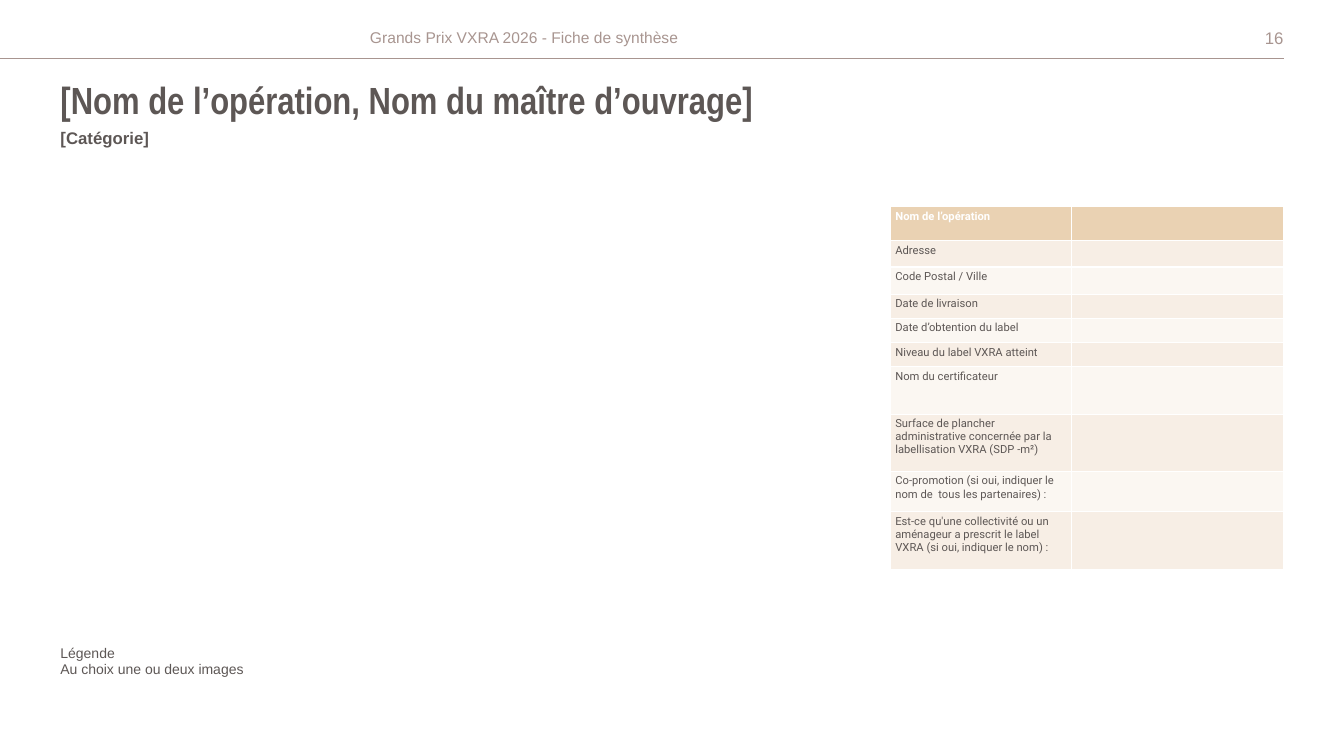
import lxml.etree
import pptx
import pptx.dml.color
import pptx.enum.shapes
import pptx.enum.text
import pptx.oxml.ns
import pptx.util

Inches = pptx.util.Inches
Pt = pptx.util.Pt
RGBColor = pptx.dml.color.RGBColor
Align = pptx.enum.text.PP_ALIGN
Anchor = pptx.enum.text.MSO_ANCHOR
qn = pptx.oxml.ns.qn

WHITE = RGBColor(0xFF, 0xFF, 0xFF)
TAUPE = RGBColor(0xA8, 0x95, 0x90)
CHARCOAL = RGBColor(0x5D, 0x57, 0x55)
SAND = RGBColor(0xEA, 0xD2, 0xB3)
CREAM = RGBColor(0xF7, 0xEE, 0xE5)
IVORY = RGBColor(0xFB, 0xF7, 0xF2)

LEFT = 0.6
RIGHT = 12.73

OPERATION_ROWS = [
    ("Nom de l’opération", 0.34),
    ("Adresse", 0.26),
    ("Code Postal / Ville", 0.27),
    ("Date de livraison", 0.24),
    ("Date d’obtention du label", 0.24),
    ("Niveau du label VXRA atteint", 0.24),
    ("Nom du certificateur", 0.47),
    ("Surface de plancher administrative concernée par la "
     "labellisation VXRA (SDP -m²)", 0.57),
    ("Co-promotion (si oui, indiquer le nom de  tous les partenaires) :", 0.4),
    ("Est-ce qu'une collectivité ou un aménageur a prescrit le label VXRA "
     "(si oui, indiquer le nom) :", 0.57),
]


def write_text(frame, text, size=12, font="Arial", color=CHARCOAL, bold=False,
               align=Align.LEFT, line_spacing=1.0):
    """Fill a text frame, one paragraph per line of text."""
    frame.word_wrap = True
    for index, line in enumerate(text.split("\n")):
        paragraph = frame.add_paragraph() if index else frame.paragraphs[0]
        paragraph.alignment = align
        paragraph.line_spacing = line_spacing
        if not line:
            # An empty line takes its height from the end-of-paragraph size.
            end = lxml.etree.SubElement(paragraph._p, qn("a:endParaRPr"))
            end.set("sz", str(size * 100))
            continue
        run = paragraph.add_run()
        run.text = line
        run.font.size = Pt(size)
        run.font.name = font
        run.font.bold = bold
        run.font.color.rgb = color


class SummarySheet:
    def __init__(self, presentation):
        self.slide = presentation.slides.add_slide(presentation.slide_layouts[5])

    def fill_box(self, box, text, **style):
        frame = box.text_frame
        frame.margin_left = frame.margin_right = 0
        frame.margin_top = frame.margin_bottom = 0
        frame.auto_size = pptx.enum.text.MSO_AUTO_SIZE.NONE
        frame.vertical_anchor = Anchor.TOP
        write_text(frame, text, **style)

    def title(self, text, left, top, width, height, **style):
        heading = self.slide.shapes.title
        heading.left, heading.top = Inches(left), Inches(top)
        heading.width, heading.height = Inches(width), Inches(height)
        self.fill_box(heading, text, **style)

    def text(self, text, left, top, width, height, **style):
        box = self.slide.shapes.add_textbox(
            Inches(left), Inches(top), Inches(width), Inches(height))
        self.fill_box(box, text, **style)

    def rule(self, left, right, top):
        rule = self.slide.shapes.add_connector(
            pptx.enum.shapes.MSO_CONNECTOR.STRAIGHT,
            Inches(left), Inches(top), Inches(right), Inches(top))
        rule.line.color.rgb = TAUPE
        rule.line.width = Pt(1)
        lxml.etree.SubElement(rule._element.spPr, qn("a:effectLst"))

    def form(self, rows, left, top, widths):
        """Add a table of labels with an empty answer column."""
        height = sum(row_height for _, row_height in rows)
        table = self.slide.shapes.add_table(
            len(rows), len(widths), Inches(left), Inches(top),
            Inches(sum(widths)), Inches(height)).table
        for column, width in zip(table.columns, widths):
            column.width = Inches(width)
        for index, (label, row_height) in enumerate(rows):
            is_header = index == 0
            table.rows[index].height = Inches(row_height)
            fill = SAND if is_header else (CREAM if index % 2 else IVORY)
            for cell, text in zip(table.rows[index].cells, (label, "")):
                cell.fill.solid()
                cell.fill.fore_color.rgb = fill
                cell.margin_left = cell.margin_right = Inches(0.05)
                cell.margin_top = cell.margin_bottom = Inches(0.03)
                write_text(cell.text_frame, text, size=8, font="Roboto",
                           color=WHITE if is_header else CHARCOAL, bold=is_header)


def main():
    presentation = pptx.Presentation()
    presentation.slide_width = Inches(13.33)
    presentation.slide_height = Inches(7.5)

    sheet = SummarySheet(presentation)
    sheet.rule(0, RIGHT, 0.58)
    sheet.text("16", RIGHT - 3, 0.27, 3, 0.18, color=TAUPE, align=Align.RIGHT)
    sheet.text("Grands Prix VXRA 2026 - Fiche de synthèse", 3.67, 0.3, 4.53, 0.18,
               size=11.1, color=TAUPE, line_spacing=0.9)
    sheet.title("[Nom de l’opération, Nom du maître d’ouvrage]", LEFT, 0.85, 9.06, 0.38,
                size=27, font="Arial Narrow", bold=True, line_spacing=0.8)
    sheet.text("[Catégorie]", LEFT, 1.27, 2.86, 0.36, bold=True)
    sheet.text("Légende\nAu choix une ou deux images", LEFT, 6.39, 3.9, 0.51, size=10)
    sheet.form(OPERATION_ROWS, 8.83, 2.05, (1.8, 2.1))

    presentation.save("out.pptx")


if __name__ == "__main__":
    main()
